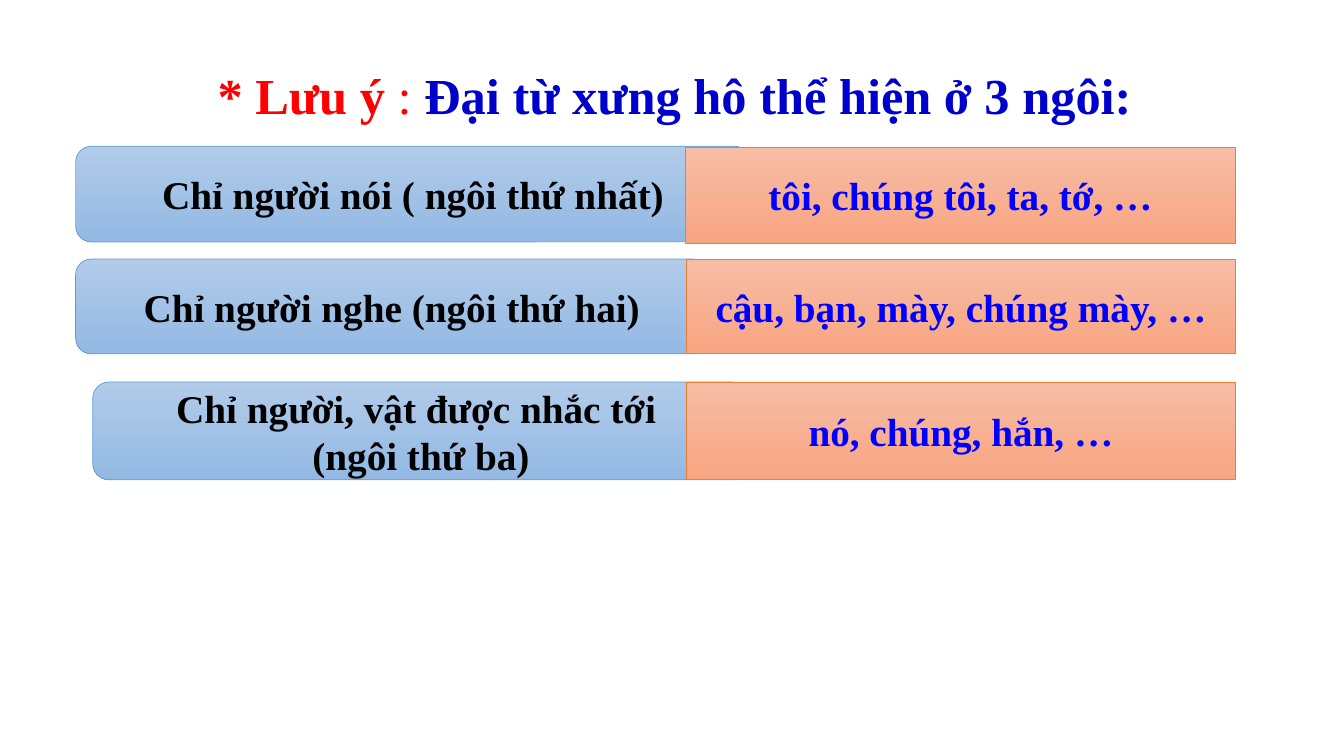
from pptx import Presentation
from pptx.dml.color import RGBColor
from pptx.enum.shapes import MSO_SHAPE
from pptx.enum.text import MSO_ANCHOR, PP_ALIGN
from pptx.util import Inches, Pt

RED = RGBColor(0xFF, 0x00, 0x00)
NAVY = RGBColor(0x00, 0x00, 0xCC)
BLUE = RGBColor(0x00, 0x00, 0xFF)
BLACK = RGBColor(0x00, 0x00, 0x00)
SKY_LIGHT = RGBColor(0xB1, 0xCB, 0xE9)
SKY_DARK = RGBColor(0x93, 0xB9, 0xE4)
SKY_EDGE = RGBColor(0x5B, 0x9B, 0xD5)
PEACH_LIGHT = RGBColor(0xF7, 0xBD, 0xA5)
PEACH_DARK = RGBColor(0xF8, 0xA5, 0x82)
PEACH_EDGE = RGBColor(0xED, 0x7D, 0x31)

PERSON_STYLE = (MSO_SHAPE.ROUNDED_RECTANGLE, SKY_LIGHT, SKY_DARK, SKY_EDGE, BLACK)
PRONOUN_STYLE = (MSO_SHAPE.RECTANGLE, PEACH_LIGHT, PEACH_DARK, PEACH_EDGE, BLUE)
RIGHT_EDGE = 12.25

ROWS = [
    (["Chỉ người nói ( ngôi thứ nhất)"], (0.75, 1.45, 6.69, 0.95),
     "tôi, chúng tôi, ta, tớ, …", (6.8, 1.46)),
    (["Chỉ người nghe (ngôi thứ hai)"], (0.75, 2.57, 6.27, 0.94),
     "cậu, bạn, mày, chúng mày, …", (6.81, 2.57)),
    (["Chỉ người, vật được nhắc tới ", "(ngôi thứ ba)"], (0.92, 3.79, 6.51, 0.97),
     "nó, chúng, hắn, …", (6.81, 3.79)),
]


def add_text(paragraph, text, size=28, color=BLACK, bold=True):
    run = paragraph.add_run()
    run.text = text
    run.font.name = "Times New Roman"
    run.font.size = Pt(size)
    run.font.bold = bold
    run.font.color.rgb = color


def add_heading(slide):
    heading = slide.shapes.add_textbox(Inches(2.06), Inches(0.59), Inches(10.19), Inches(0.71))
    heading.text_frame.word_wrap = True
    line = heading.text_frame.paragraphs[0]
    add_text(line, "* Lưu ý ", size=36, color=RED)
    add_text(line, ": ", size=36, color=RED, bold=False)
    add_text(line, "Đại từ xưng hô thể hiện ở 3 ngôi:", size=36, color=NAVY)


def add_panel(shapes, bounds, lines, style):
    outline, light, dark, edge, text_color = style
    panel = shapes.add_shape(outline, *map(Inches, bounds))
    panel.shadow.inherit = False
    panel.fill.gradient()
    panel.fill.gradient_angle = 270
    for stop, color in zip(panel.fill.gradient_stops, (light, dark)):
        stop.color.rgb = color
    panel.fill.gradient_stops[0].position = 0
    panel.fill.gradient_stops[1].position = 1
    panel.line.color.rgb = edge
    panel.line.width = Pt(0.5)
    frame = panel.text_frame
    frame.word_wrap = True
    frame.vertical_anchor = MSO_ANCHOR.MIDDLE
    for index, text in enumerate(lines):
        paragraph = frame.add_paragraph() if index else frame.paragraphs[0]
        paragraph.alignment = PP_ALIGN.CENTER
        add_text(paragraph, text, color=text_color)


def add_row(slide, person_lines, person_bounds, pronouns, pronoun_corner):
    row = slide.shapes.add_group_shape().shapes
    left, top = pronoun_corner
    pronoun_bounds = (left, top, RIGHT_EDGE - left, person_bounds[3])
    add_panel(row, person_bounds, person_lines, PERSON_STYLE)
    add_panel(row, pronoun_bounds, [pronouns], PRONOUN_STYLE)


def main():
    presentation = Presentation()
    presentation.slide_width = Inches(13.33)
    presentation.slide_height = Inches(7.5)
    slide = presentation.slides.add_slide(presentation.slide_layouts[6])
    add_heading(slide)
    for row in ROWS:
        add_row(slide, *row)
    presentation.save("out.pptx")


if __name__ == "__main__":
    main()
